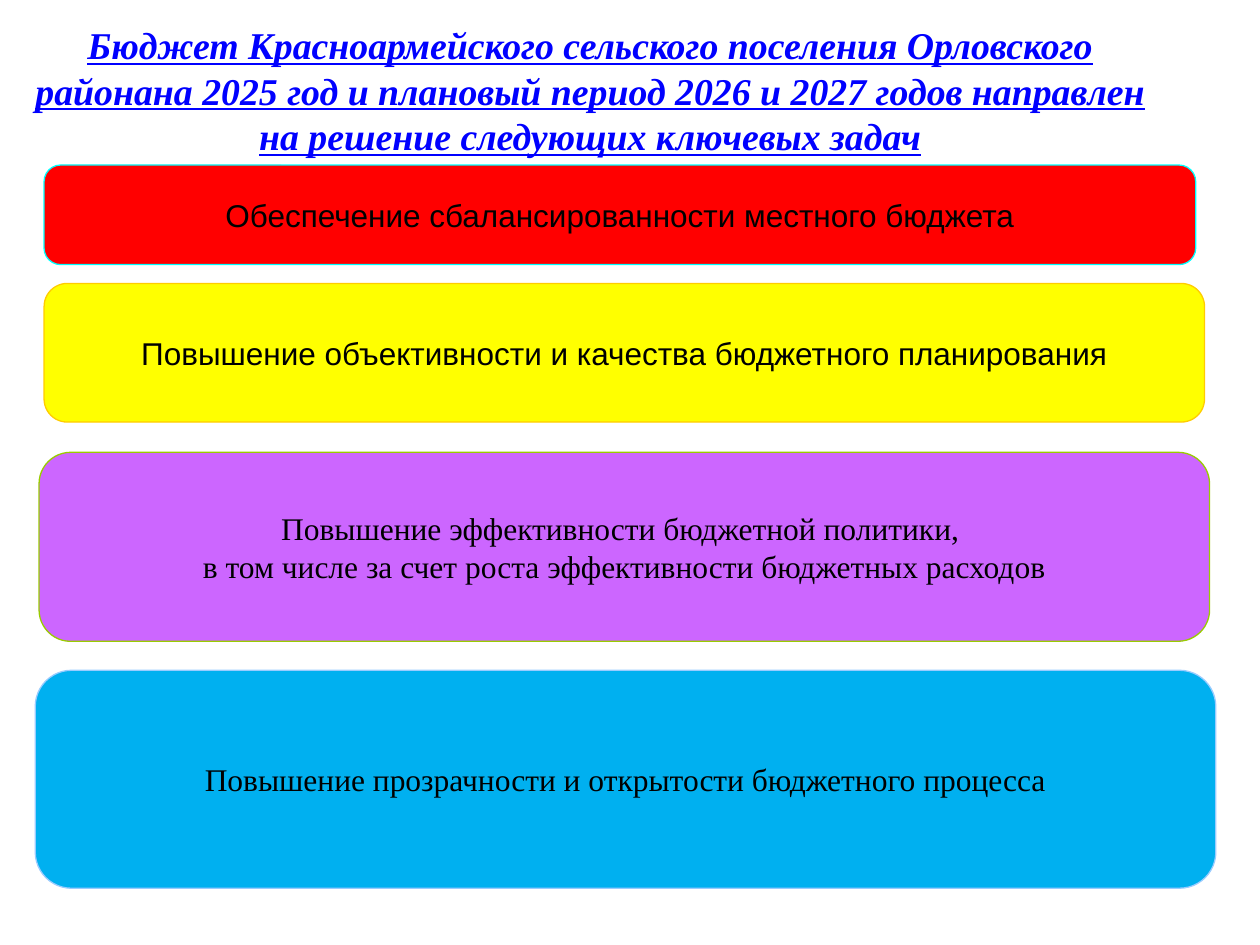
import pptx
import pptx.dml.color
import pptx.enum.shapes
import pptx.enum.text
import pptx.util
from pptx.util import Inches

COLORS = {
    "title": "0000FF", "text": "000000",
    "red": "FF0000", "cyan": "00FFFF",
    "yellow": "FFFF00", "gold": "FFCC00",
    "violet": "CC66FF", "green": "99CC00",
    "blue": "00B0F0", "pale_blue": "99CCFF",
}
SANS, SERIF = "Arial", "Times New Roman"
TITLE = ("Бюджет Красноармейского сельского поселения Орловского районана "
         "2025 год и плановый период 2026 и 2027 годов направлен "
         "на решение следующих ключевых задач")
TITLE_FORMAT = {"name": SERIF, "size": pptx.util.Pt(21.6),
                "bold": True, "italic": True, "underline": True}

# box, fill, line, font, paragraphs
TASKS = [
    ((0.35, 1.31, 9.14, 0.79), "red", "cyan", SANS,
     ["Обеспечение сбалансированности местного бюджета"]),
    ((0.35, 2.25, 9.21, 1.1), "yellow", "gold", SANS,
     ["Повышение объективности и качества бюджетного планирования"]),
    ((0.31, 3.59, 9.29, 1.5), "violet", "green", SERIF,
     ["Повышение эффективности бюджетной политики, ",
      "в том числе за счет роста эффективности бюджетных расходов"]),
    ((0.28, 5.32, 9.37, 1.73), "blue", "pale_blue", SERIF,
     ["Повышение прозрачности и открытости бюджетного процесса"]),
]


def rgb(name):
    return pptx.dml.color.RGBColor.from_string(COLORS[name])


def write_text(tf, lines, color, font_format, wrap):
    """Fill a frame with centred paragraphs, one for each line."""
    tf.word_wrap = wrap
    tf.vertical_anchor = pptx.enum.text.MSO_ANCHOR.MIDDLE
    for i, line in enumerate(lines):
        p = tf.add_paragraph() if i else tf.paragraphs[0]
        p.alignment = pptx.enum.text.PP_ALIGN.CENTER
        r = p.add_run()
        r.text = line
        r.font.color.rgb = rgb(color)
        for key, value in font_format.items():
            setattr(r.font, key, value)


def add_title(s, box):
    sp = s.shapes.add_textbox(*map(Inches, box))
    write_text(sp.text_frame, [TITLE], "title", TITLE_FORMAT, True)


def add_task(s, box, fill, line, font, lines):
    sp = s.shapes.add_shape(
        pptx.enum.shapes.MSO_SHAPE.ROUNDED_RECTANGLE, *map(Inches, box))
    sp.shadow.inherit = False
    sp.fill.solid()
    sp.fill.fore_color.rgb = rgb(fill)
    sp.line.color.rgb = rgb(line)
    sp.line.width = pptx.util.Pt(0.75)
    font_format = {"name": font, "size": pptx.util.Pt(18)}
    write_text(sp.text_frame, lines, "text", font_format, False)


def main():
    prs = pptx.Presentation()
    prs.slide_width, prs.slide_height = Inches(10), Inches(7.5)
    s = prs.slides.add_slide(prs.slide_layouts[6])
    add_title(s, (0, 0.28, 9.37, 0.87))
    for task in TASKS:
        add_task(s, *task)
    prs.save("out.pptx")


if __name__ == "__main__":
    main()
